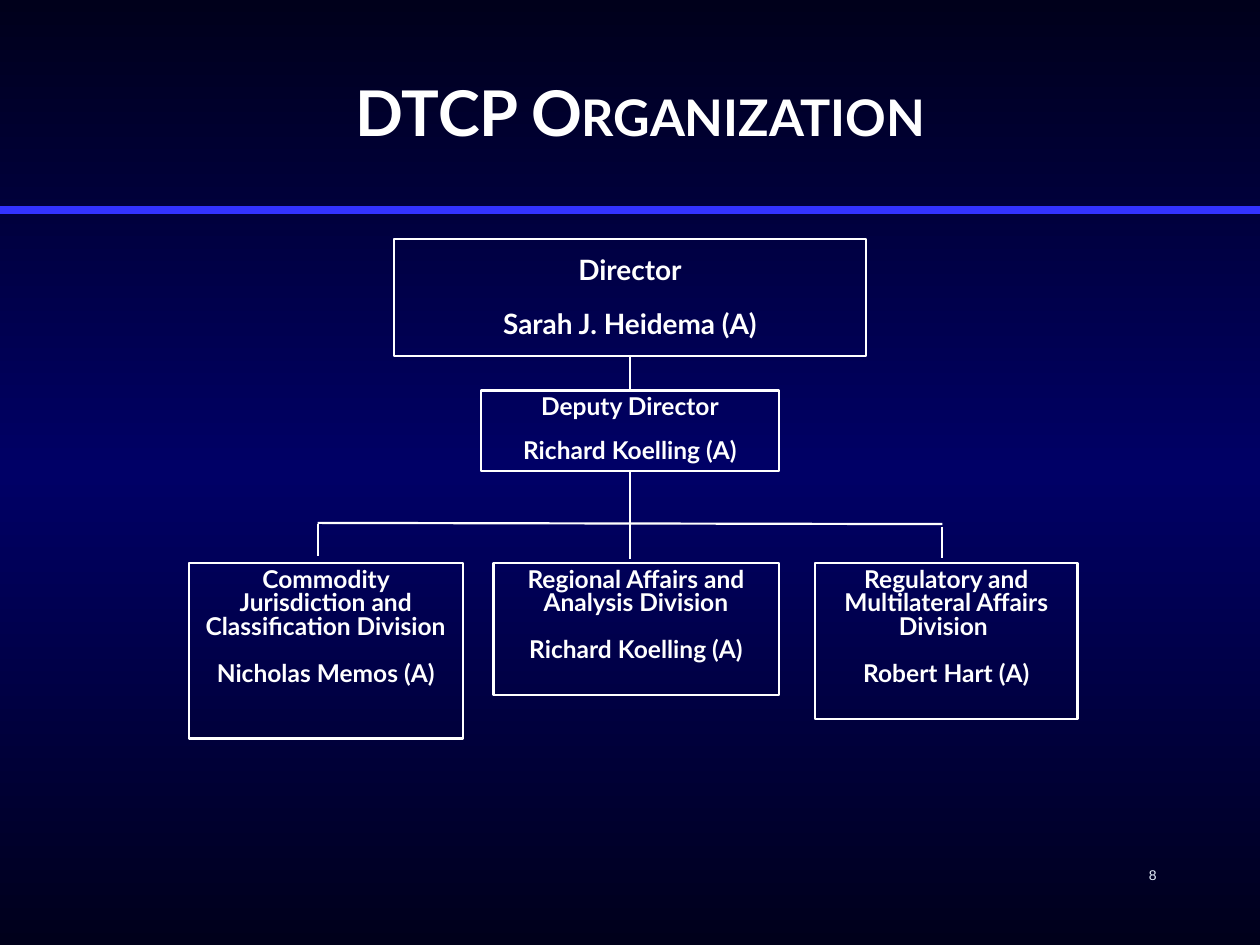
from copy import deepcopy

from lxml.etree import SubElement
from pptx import Presentation
from pptx.dml.color import RGBColor
from pptx.enum.shapes import MSO_CONNECTOR, MSO_SHAPE
from pptx.enum.text import MSO_ANCHOR, PP_ALIGN
from pptx.oxml.ns import qn
from pptx.util import Pt

COLORS = {
    "edge": "00001B",
    "middle": "000066",
    "rule": "3333FF",
    "white": "FFFFFF",
    "number": "E5EFFA",
}
CENTER = 360
DIVISION_TOP = 321.8
DIVISIONS = [
    (108, 156.4, 100.2, "Commodity Jurisdiction and Classification Division", "Nicholas Memos (A)"),
    (282, 163, 75.2, "Regional Affairs and Analysis Division", "Richard Koelling (A)"),
    (465.8, 150, 88.9, "Regulatory and Multilateral Affairs Division ", "Robert Hart (A)"),
]
DROPS = [(181.9, 299.5), (CENTER, 301.5), (538.5, 301)]


def color(name):
    """Return a named colour."""
    return RGBColor.from_string(COLORS[name])


def paint_background(page):
    """Fill the page with a vertical gradient, brightest in the middle."""
    fill = page.background.fill
    fill.gradient()
    fill.gradient_angle = 90
    stop_list = page.background.element.find(".//" + qn("a:gsLst")) if hasattr(
        page.background, "element") else page.element.find(".//" + qn("a:gsLst"))
    stop_list.append(deepcopy(stop_list[0]))
    for stop, position, name in zip(fill.gradient_stops, (0, 0.5, 1), ("edge", "middle", "edge")):
        stop.position = position
        stop.color.rgb = color(name)


def style(para, size, font="Lato", name="white", bold=True):
    """Set the font of a whole paragraph."""
    para.font.name = font
    para.font.size = Pt(size)
    para.font.bold = bold
    para.font.color.rgb = color(name)


def add_line(page, start, end, name="white", width=1.25):
    """Draw a straight line without a shadow."""
    line = page.shapes.add_connector(
        MSO_CONNECTOR.STRAIGHT, *(Pt(value) for value in (*start, *end)))
    line.line.color.rgb = color(name)
    line.line.width = Pt(width)
    SubElement(line._element.spPr, qn("a:effectLst"))
    return line


def add_post(page, left, top, width, height, role, person, size=14, gap=13.4, inset=3.6):
    """Draw an outlined box with a role and the person who holds it."""
    box = page.shapes.add_shape(
        MSO_SHAPE.RECTANGLE, Pt(left), Pt(top), Pt(width), Pt(height))
    box.shadow.inherit = False
    box.fill.background()
    box.line.color.rgb = color("white")
    box.line.width = Pt(1.25)
    frame = box.text_frame
    frame.word_wrap = True
    frame.vertical_anchor = MSO_ANCHOR.TOP
    frame.margin_top = Pt(inset)
    frame.text = f"{role}\n{person}"
    for para in frame.paragraphs:
        para.alignment = PP_ALIGN.CENTER
        para.line_spacing = 0.8
        style(para, size)
    frame.paragraphs[1].space_before = Pt(gap)
    return box


def add_text(page, left, top, width, height, text, wrap=True):
    """Add a one-paragraph text box and return its paragraph."""
    box = page.shapes.add_textbox(Pt(left), Pt(top), Pt(width), Pt(height))
    box.text_frame.word_wrap = wrap
    box.text_frame.text = text
    return box.text_frame.paragraphs[0]


def add_title(page, text):
    """Add the centred small-caps title."""
    para = add_text(page, 126, 38.2, 480, 51, text)
    para.alignment = PP_ALIGN.CENTER
    style(para, 36)
    para.runs[0]._r.get_or_add_rPr().set("cap", "small")


def add_chart_of_posts(page):
    """Draw the posts and the lines between them."""
    director = add_post(page, CENTER - 135, 136.8, 270, 66.6, "Director",
                        "Sarah J. Heidema (A)", size=16, gap=15.4, inset=11.3)
    deputy = add_post(page, CENTER - 85, 223.2, 170, 46.1, "Deputy Director",
                      "Richard Koelling (A)", gap=11.5)
    for left, width, height, role, person in DIVISIONS:
        add_post(page, left, DIVISION_TOP, width, height, role, person)
    link = add_line(page, (CENTER, 203.4), (CENTER, 223.2))
    link.begin_connect(director, 2)
    link.end_connect(deputy, 0)
    stem = add_line(page, (CENTER, 269.3), (CENTER, 303))
    stem.begin_connect(deputy, 2)
    add_line(page, (181.5, 298.8), (538.5, 299.5))
    for x, top in DROPS:
        add_line(page, (x, top), (x, top + 18))


def main():
    """Build the organization slide."""
    deck = Presentation()
    deck.slide_width, deck.slide_height = Pt(720), Pt(540)
    page = deck.slides.add_slide(deck.slide_layouts[6])
    paint_background(page)
    add_line(page, (0, 120), (720, 120), "rule", 5)
    add_title(page, "DTCP Organization")
    add_chart_of_posts(page)
    number = add_text(page, 649.4, 491.8, 16.6, 15.8, "8", wrap=False)
    style(number, 8, "Arial", "number", bold=False)
    deck.save("out.pptx")


if __name__ == "__main__":
    main()
